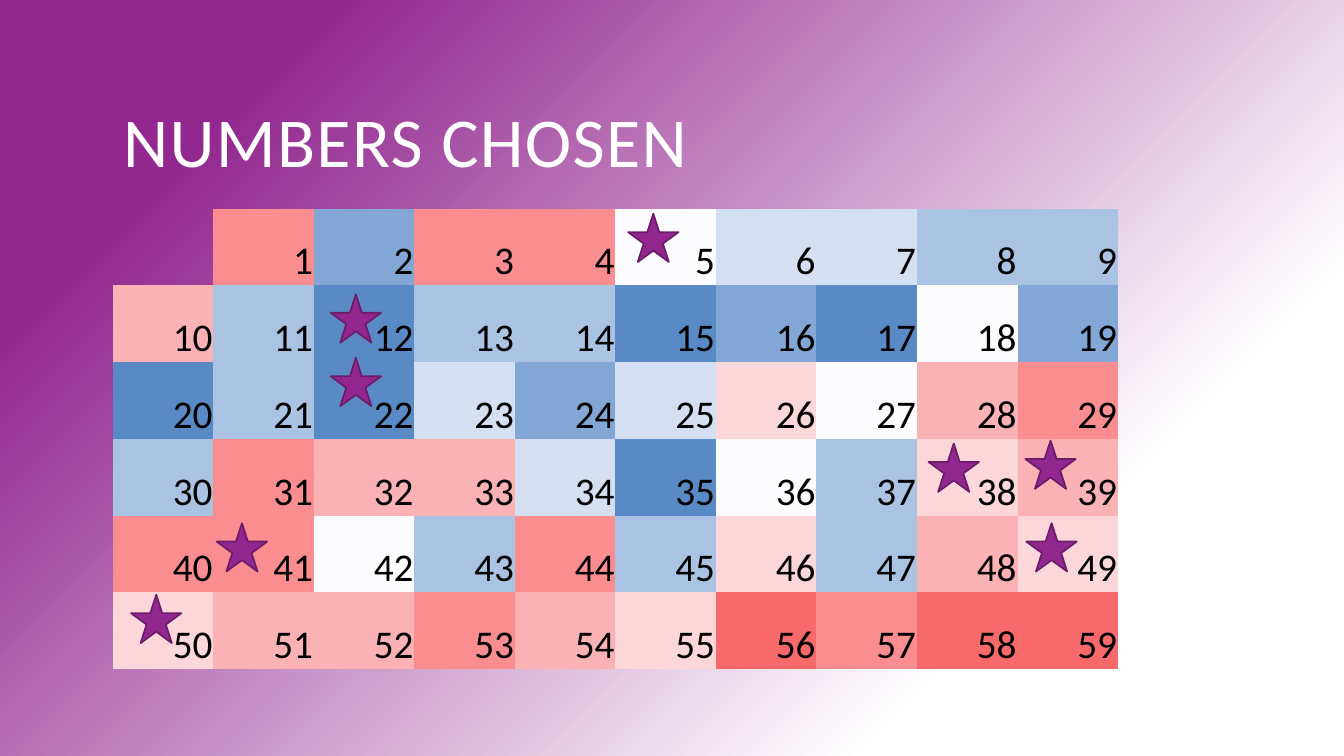
from dataclasses import dataclass

from lxml import etree
from pptx import Presentation
from pptx.dml.color import RGBColor
from pptx.enum.shapes import MSO_CONNECTOR, MSO_SHAPE
from pptx.enum.text import MSO_ANCHOR, PP_ALIGN
from pptx.oxml import parse_xml
from pptx.oxml.ns import nsdecls, qn
from pptx.slide import Slide
from pptx.text.text import TextFrame
from pptx.util import Inches, Pt

STRAIGHT = MSO_CONNECTOR.STRAIGHT
STAR = MSO_SHAPE.STAR_5_POINT
MIDDLE, BOTTOM = MSO_ANCHOR.MIDDLE, MSO_ANCHOR.BOTTOM
LEFT, RIGHT = PP_ALIGN.LEFT, PP_ALIGN.RIGHT
TITLE_ONLY = 5
PLAIN_TABLE_STYLE = "{2D5ABB26-0587-4C30-8999-92F81FD0307C}"


@dataclass(frozen=True)
class Theme:
    font: str = "Calibri"
    title_size: float = 50
    number_size: float = 28
    purple: str = "92278F"
    dark_purple: str = "6C1D6A"
    white: str = "FFFFFF"
    black: str = "000000"
    # Heat scale from red (level 0) to blue (level 8)
    heat: tuple[str, ...] = ("F8696B", "F98D90", "FAB2B5", "FBD7DA", "FCFCFF",
                             "D4E0F1", "ABC3E3", "83A7D5", "5A8AC6")


@dataclass(frozen=True)
class Star:
    left: float
    top: float


THEME = Theme()

# One heat level per number, ten numbers to a row; "." is the empty cell
HEAT_LEVELS = (".171145566", "2686687847", "8685753421",
               "6122584632", "1146163623", "3221230100")
TABLE_LEFT, TABLE_TOP, TABLE_WIDTH, TABLE_HEIGHT = 1.12, 2.07, 9.97, 4.57

STAR_WIDTH, STAR_HEIGHT = 0.5, 0.48
STARS = (Star(3.28, 2.92), Star(1.3, 5.9), Star(10.17, 4.37), Star(10.18, 5.19),
         Star(9.21, 4.4), Star(2.15, 5.19), Star(6.23, 2.12), Star(3.28, 3.55))


def write_text(frame: TextFrame, text: str, *, size: float, color: str,
               align: PP_ALIGN, line_spacing: float = 1.0,
               letter_spacing: float = 0) -> None:
    para = frame.paragraphs[0]
    para.alignment = align
    para.line_spacing = line_spacing
    span = para.add_run()
    span.text = text
    span.font.name = THEME.font
    span.font.size = Pt(size)
    span.font.color.rgb = RGBColor.from_string(color)
    if letter_spacing:
        span.font._element.set("spc", str(round(letter_spacing * 100)))


def paint_background(page: Slide) -> None:
    page.background.fill.solid()
    properties = page.background._cSld.find(qn("p:bg")).find(qn("p:bgPr"))
    properties.remove(properties[0])
    stops = "".join(
        f'<a:gs pos="{percent * 1000}"><a:srgbClr val="{color}"/></a:gs>'
        for percent, color in ((0, THEME.white), (23, THEME.white), (84, THEME.purple)))
    properties.insert(0, parse_xml(
        f'<a:gradFill {nsdecls("a")} rotWithShape="1"><a:gsLst>{stops}</a:gsLst>'
        '<a:path path="circle"><a:fillToRect l="100000" t="100000"/></a:path>'
        '</a:gradFill>'))


def add_accent_line(page: Slide) -> None:
    line = page.shapes.add_connector(STRAIGHT, Inches(0.83), Inches(1.9),
                                     Inches(0.83), Inches(0.9))
    line.line.color.rgb = RGBColor.from_string(THEME.purple)
    line.line.width = Pt(1.5)
    etree.SubElement(line._element.spPr, qn("a:effectLst"))


def add_title(page: Slide) -> None:
    title = page.shapes.title
    title.left, title.top = Inches(1.12), Inches(0.64)
    title.width, title.height = Inches(10.63), Inches(1.64)
    title.text_frame.vertical_anchor = MIDDLE
    write_text(title.text_frame, "NUMBERS CHOSEN", size=THEME.title_size,
               color=THEME.white, align=LEFT, line_spacing=0.8, letter_spacing=1)


def add_number_table(page: Slide) -> None:
    columns = len(HEAT_LEVELS[0])
    table = page.shapes.add_table(
        len(HEAT_LEVELS), columns, Inches(TABLE_LEFT), Inches(TABLE_TOP),
        Inches(TABLE_WIDTH), Inches(TABLE_HEIGHT)).table
    table.first_row = table.horz_banding = False
    table._tbl.tblPr.find(qn("a:tableStyleId")).text = PLAIN_TABLE_STYLE

    for row, levels in enumerate(HEAT_LEVELS):
        for column, level in enumerate(levels):
            cell = table.cell(row, column)
            if level == ".":
                cell.fill.background()
                continue
            cell.fill.solid()
            cell.fill.fore_color.rgb = RGBColor.from_string(THEME.heat[int(level)])
            cell.vertical_anchor = BOTTOM
            cell.margin_left = cell.margin_right = cell.margin_top = Inches(0.01)
            cell.margin_bottom = 0
            write_text(cell.text_frame, str(row * columns + column),
                       size=THEME.number_size, color=THEME.black, align=RIGHT)


def add_star(page: Slide, star: Star) -> None:
    shape = page.shapes.add_shape(STAR, Inches(star.left), Inches(star.top),
                                  Inches(STAR_WIDTH), Inches(STAR_HEIGHT))
    shape.shadow.inherit = False
    shape.fill.solid()
    shape.fill.fore_color.rgb = RGBColor.from_string(THEME.purple)
    shape.line.color.rgb = RGBColor.from_string(THEME.dark_purple)
    shape.line.width = Pt(1.25)


def main() -> None:
    deck = Presentation()
    deck.slide_width, deck.slide_height = Inches(13.33), Inches(7.5)
    page = deck.slides.add_slide(deck.slide_layouts[TITLE_ONLY])

    # Backdrop and heading
    paint_background(page)
    add_accent_line(page)
    add_title(page)

    # Heat map with the chosen numbers starred
    add_number_table(page)
    for star in STARS:
        add_star(page, star)

    deck.save("out.pptx")


if __name__ == "__main__":
    main()
